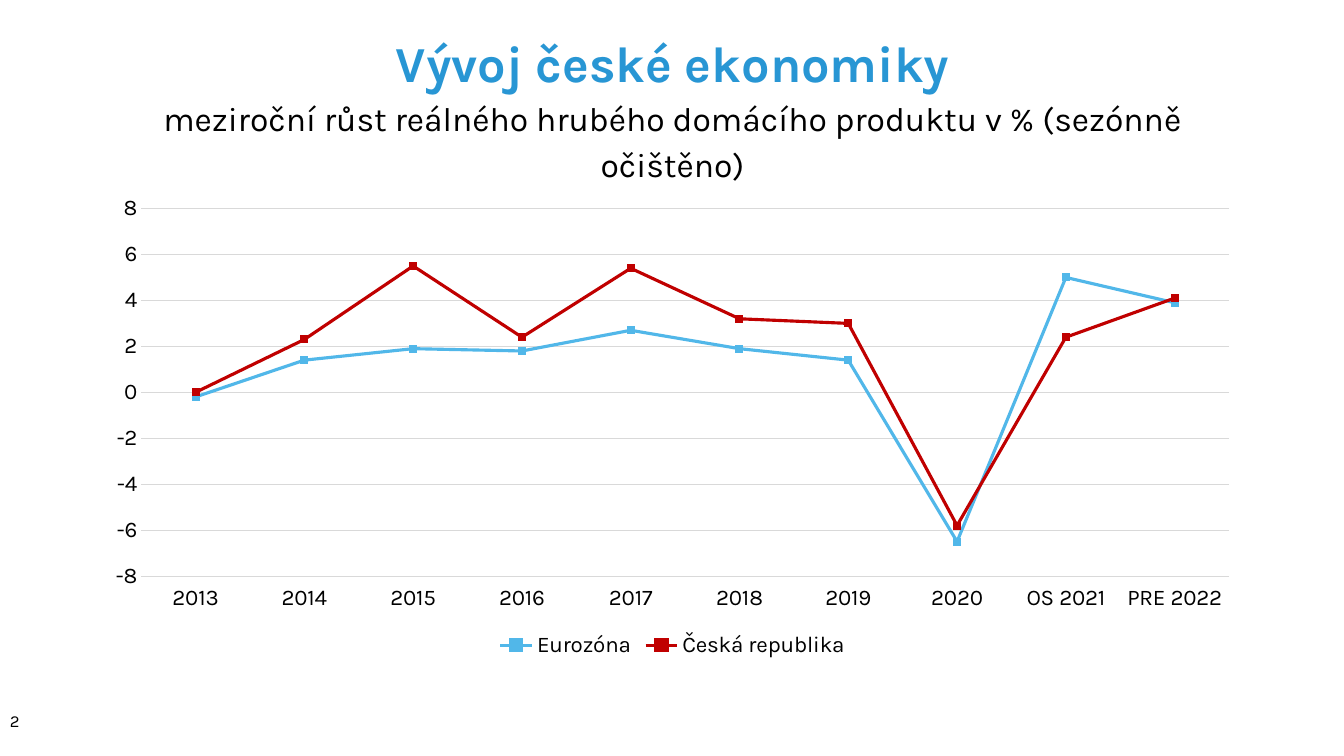
"""Build a slide with a line chart of Czech and euro area GDP growth."""
from lxml import etree
from pptx import Presentation
from pptx.chart.data import CategoryChartData
from pptx.dml.color import RGBColor
from pptx.enum.chart import (XL_CHART_TYPE, XL_LEGEND_POSITION, XL_MARKER_STYLE,
                             XL_TICK_LABEL_POSITION, XL_TICK_MARK)
from pptx.enum.text import MSO_ANCHOR, MSO_AUTO_SIZE, PP_ALIGN
from pptx.oxml.ns import qn
from pptx.util import Inches, Pt

LINE_MARKERS = XL_CHART_TYPE.LINE_MARKERS
BOTTOM = XL_LEGEND_POSITION.BOTTOM
SQUARE = XL_MARKER_STYLE.SQUARE
LOW = XL_TICK_LABEL_POSITION.LOW
NO_TICK = XL_TICK_MARK.NONE
MIDDLE = MSO_ANCHOR.MIDDLE
NO_FIT = MSO_AUTO_SIZE.NONE
CENTER = PP_ALIGN.CENTER

HEADING = "Vývoj české ekonomiky"
SUBHEADING = "meziroční růst reálného hrubého domácího produktu v % (sezónně očištěno)"
PAGE_NUMBER = "2"
YEARS = ["2013", "2014", "2015", "2016", "2017", "2018", "2019", "2020",
         "OS 2021", "PRE 2022"]
GROWTH = [
    ("Eurozóna", "51B7E9", [-0.2, 1.4, 1.9, 1.8, 2.7, 1.9, 1.4, -6.5, 5, 3.9]),
    ("Česká republika", "C00000", [0, 2.3, 5.5, 2.4, 5.4, 3.2, 3, -5.8, 2.4, 4.1]),
]

FONT = "Karla"
BLACK, BLUE, GRID = "000000", "2896D4", "D9D9D9"
WIDTH, HEIGHT = 13.33, 7.5
MARGIN = 0.92
CONTENT_WIDTH = 11.5
TITLE_AREA = (MARGIN, 0.4, CONTENT_WIDTH, 1.27)
CHART_AREA = (MARGIN, 1.85, CONTENT_WIDTH, 4.72)
NUMBER_AREA = (0, 6.94, 0.48, 0.43)


def color(value):
    return RGBColor.from_string(value)


def apply(target, values):
    for name, value in values.items():
        setattr(target, name, value)


def box(area):
    return [Inches(length) for length in area]


def style_font(font, size, tone=BLACK, bold=False):
    apply(font, {"name": FONT, "size": Pt(size), "bold": bold})
    font.color.rgb = color(tone)


def style_line(line, tone, width):
    line.color.rgb = color(tone)
    line.width = Pt(width)


def add_run(paragraph, text, size, tone=BLACK, bold=False):
    run = paragraph.add_run()
    run.text = text
    style_font(run.font, size, tone, bold)


def add_heading(slide):
    title = slide.shapes.title
    apply(title, dict(zip(("left", "top", "width", "height"), box(TITLE_AREA))))
    apply(title.text_frame, {"vertical_anchor": MIDDLE, "word_wrap": True,
                             "auto_size": NO_FIT})
    paragraph = title.text_frame.paragraphs[0]
    apply(paragraph, {"alignment": CENTER, "line_spacing": 1.13})
    add_run(paragraph, HEADING, 36, BLUE, True)
    paragraph.add_line_break()
    add_run(paragraph, SUBHEADING, 24)


def add_growth_chart(slide):
    data = CategoryChartData()
    data.categories = YEARS
    for country, _, rates in GROWTH:
        data.add_series(country, rates)
    chart = slide.shapes.add_chart(LINE_MARKERS, *box(CHART_AREA), data).chart
    apply(chart, {"has_title": False, "has_legend": True})
    style_font(chart.font, 16)
    apply(chart.legend, {"position": BOTTOM, "include_in_layout": False})
    style_font(chart.legend.font, 16)

    years, rates = chart.category_axis, chart.value_axis
    for axis in (years, rates):
        apply(axis, {"major_tick_mark": NO_TICK, "minor_tick_mark": NO_TICK})
        style_font(axis.tick_labels.font, 16)
    years.tick_label_position = LOW
    style_line(years.format.line, GRID, 0.75)
    apply(rates, {"minimum_scale": -8, "maximum_scale": 8, "major_unit": 2,
                  "has_major_gridlines": True})
    rates.format.line.fill.background()
    style_line(rates.major_gridlines.format.line, GRID, 0.75)

    chart.plots[0].vary_by_categories = False
    for series, (_, tone, _) in zip(chart.plots[0].series, GROWTH):
        series.smooth = False
        style_line(series.format.line, tone, 2.25)
        etree.SubElement(series.format.line._get_or_add_ln(), qn("a:round"))
        apply(series.marker, {"style": SQUARE, "size": 5})
        series.marker.format.fill.solid()
        series.marker.format.fill.fore_color.rgb = color(tone)
        style_line(series.marker.format.line, tone, 0.75)


def add_page_number(slide):
    frame = slide.shapes.add_textbox(*box(NUMBER_AREA)).text_frame
    apply(frame, {"word_wrap": True, "vertical_anchor": MIDDLE})
    add_run(frame.paragraphs[0], PAGE_NUMBER, 12)


def main():
    deck = Presentation()
    apply(deck, {"slide_width": Inches(WIDTH), "slide_height": Inches(HEIGHT)})
    slide = deck.slides.add_slide(deck.slide_layouts[5])
    add_heading(slide)
    add_growth_chart(slide)
    add_page_number(slide)
    deck.save("out.pptx")


if __name__ == "__main__":
    main()
